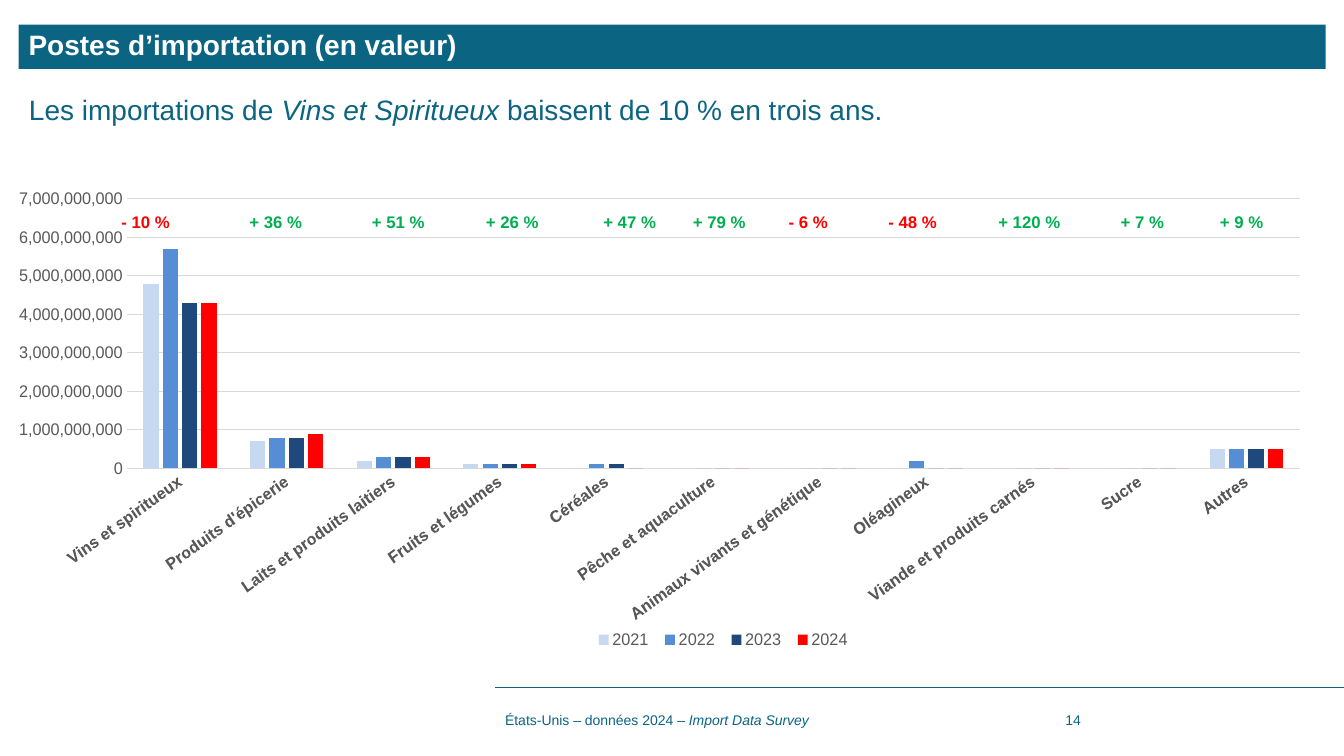
from dataclasses import dataclass

from lxml import etree
from pptx import Presentation
from pptx.chart.data import CategoryChartData
from pptx.dml.color import RGBColor
from pptx.enum.chart import XL_CHART_TYPE, XL_LEGEND_POSITION, XL_TICK_MARK
from pptx.enum.shapes import MSO_CONNECTOR, MSO_SHAPE
from pptx.enum.text import MSO_ANCHOR, PP_ALIGN
from pptx.oxml import parse_xml
from pptx.oxml.ns import nsdecls, qn
from pptx.util import Cm, Pt

COLUMNS = XL_CHART_TYPE.COLUMN_CLUSTERED
LEGEND_BOTTOM = XL_LEGEND_POSITION.BOTTOM
NO_TICK = XL_TICK_MARK.NONE
STRAIGHT = MSO_CONNECTOR.STRAIGHT
RECTANGLE = MSO_SHAPE.RECTANGLE
MIDDLE, TOP = MSO_ANCHOR.MIDDLE, MSO_ANCHOR.TOP
LEFT = PP_ALIGN.LEFT


@dataclass(frozen=True)
class Theme:
    """Colours, font and type sizes of the deck."""
    font: str = "Arial"
    teal: str = "0B6482"
    white: str = "FFFFFF"
    grey: str = "595959"
    grid: str = "D9D9D9"
    rise: str = "00B050"
    fall: str = "FF0000"
    years: tuple = ("C6D9F1", "558ED5", "1F497D", "FF0000")
    heading: int = 20
    label: int = 12
    footer: int = 10


@dataclass(frozen=True)
class Box:
    """A rectangle in centimetres, or in shares of a chart."""
    left: float
    top: float
    width: float
    height: float

    def lengths(self):
        """Return the rectangle as slide lengths."""
        return [Cm(side) for side in (self.left, self.top, self.width, self.height)]


THEME = Theme()
BILLION = 1_000_000_000
CATEGORIES = [
    "Vins et spiritueux", "Produits d'épicerie", "Laits et produits laitiers",
    "Fruits et légumes", "Céréales", "Pêche et aquaculture",
    "Animaux vivants et génétique", "Oléagineux", "Viande et produits carnés",
    "Sucre", "Autres",
]
IMPORTS = {
    "2021": [4.8, 0.7, 0.2, 0.1, 0, 0, 0, 0, 0, 0, 0.5],
    "2022": [5.7, 0.8, 0.3, 0.1, 0.1, 0, 0, 0.2, 0, 0, 0.5],
    "2023": [4.3, 0.8, 0.3, 0.1, 0.1, 0, 0, 0, 0, 0, 0.5],
    "2024": [4.3, 0.9, 0.3, 0.1, 0, 0, 0, 0, 0, 0, 0.5],
}
FIRST_CHANGE = "- 10 %"
CHANGES = [
    ("+ 36 %", 3.89), ("+ 51 %", 6.98), ("+ 26 %", 9.85), ("+ 47 %", 12.81),
    ("+ 79 %", 15.07), ("- 6 %", 17.31), ("- 48 %", 19.94), ("+ 120 %", 22.88),
    ("+ 7 %", 25.73), ("+ 9 %", 28.23),
]


def style_font(font, size, color, **formats):
    """Apply the theme font with a size, a colour and further formats."""
    for name, value in {"name": THEME.font, "size": Pt(size), **formats}.items():
        setattr(font, name, value)
    font.color.rgb = RGBColor.from_string(color)


def style_line(line, color, width):
    """Give a line its colour and width."""
    line.color.rgb = RGBColor.from_string(color)
    line.width = Pt(width)


def write_runs(shape, runs, size, anchor=MIDDLE, spacing=None):
    """Write (text, colour, formats) runs into a shape's first paragraph."""
    frame = shape.text_frame
    frame.word_wrap = True
    frame.vertical_anchor = anchor
    para = frame.paragraphs[0]
    para.alignment = LEFT
    para.line_spacing = spacing
    for text, color, formats in runs:
        span = para.add_run()
        span.text = text
        style_font(span.font, size, color, **formats)


def add_title(page, box):
    """Draw the filled title band."""
    band = page.shapes.add_shape(RECTANGLE, *box.lengths())
    band.shadow.inherit = False
    band.fill.solid()
    band.fill.fore_color.rgb = RGBColor.from_string(THEME.teal)
    band.line.fill.background()
    write_runs(band, [("Postes d’importation (en valeur)", THEME.white, {"bold": True})],
               THEME.heading, spacing=0.9)


def add_message(page, box):
    """Write the key message under the title."""
    runs = [
        ("Les importations de ", THEME.teal, {}),
        ("Vins et Spiritueux ", THEME.teal, {"italic": True}),
        ("baissent de 10 % en trois ans.", THEME.teal, {}),
    ]
    write_runs(page.shapes.add_textbox(*box.lengths()), runs, THEME.heading, TOP, 0.8)


def add_imports_chart(page, box):
    """Draw the clustered columns of imports by category and year."""
    data = CategoryChartData(number_format="#,##0")
    data.categories = CATEGORIES
    for year, billions in IMPORTS.items():
        data.add_series(year, [round(value * BILLION) for value in billions])
    chart = page.shapes.add_chart(COLUMNS, *box.lengths(), data).chart
    style_font(chart.font, THEME.label, THEME.grey)
    chart.has_title = False
    chart.has_legend = True
    chart.legend.position = LEGEND_BOTTOM
    chart.legend.include_in_layout = False
    style_font(chart.legend.font, THEME.label, THEME.grey)

    plot = chart.plots[0]
    for name, value in {"gap_width": 219, "overlap": -27, "vary_by_categories": False}.items():
        setattr(plot, name, value)
    for series, color in zip(plot.series, THEME.years):
        series.invert_if_negative = False
        series.format.fill.solid()
        series.format.fill.fore_color.rgb = RGBColor.from_string(color)

    for axis, bold in ((chart.category_axis, True), (chart.value_axis, False)):
        axis.major_tick_mark = axis.minor_tick_mark = NO_TICK
        style_font(axis.tick_labels.font, THEME.label, THEME.grey, bold=bold)
    style_line(chart.category_axis.format.line, THEME.grid, 0.75)
    slant = chart.category_axis._element.find(qn("c:txPr")).find(qn("a:bodyPr"))
    slant.set("rot", "-2100000")
    slant.set("vert", "horz")
    values = chart.value_axis
    scale = {"minimum_scale": 0, "maximum_scale": 7 * BILLION, "major_unit": BILLION}
    for name, value in scale.items():
        setattr(values, name, value)
    values.format.line.fill.background()
    style_line(values.major_gridlines.format.line, THEME.grid, 0.75)
    values.tick_labels.number_format = "#,##0"
    values.tick_labels.number_format_is_linked = False
    place_part(chart._chartSpace.chart.plotArea, 0, Box(0.05, 0.111, 0.929, 0.525),
               {"layoutTarget": "inner"})
    place_part(chart.legend._element, 1, Box(0.415, 0.94, 0.215, 0.06), {})


def place_part(part, index, share, target):
    """Fix a chart part at shares of the chart."""
    for automatic in part.findall(qn("c:layout")):
        part.remove(automatic)
    settings = {**target, "xMode": "edge", "yMode": "edge", "x": share.left,
                "y": share.top, "w": share.width, "h": share.height}
    items = "".join(f'<c:{name} val="{value}"/>' for name, value in settings.items())
    part.insert(index, parse_xml(f'<c:layout {nsdecls("c")}><c:manualLayout>{items}'
                                 '</c:manualLayout></c:layout>'))


def add_changes(page, box):
    """Write the row of three-year changes on centred tab stops."""
    row = page.shapes.add_textbox(*box.lengths())
    properties = row.text_frame.paragraphs[0]._p.get_or_add_pPr()
    stops = etree.SubElement(properties, qn("a:tabLst"))
    for _, centre in CHANGES:
        etree.SubElement(stops, qn("a:tab"), pos=str(int(Cm(centre))), algn="ctr")
    texts = [FIRST_CHANGE] + [f"\t{change}" for change, _ in CHANGES]
    runs = [(text, THEME.fall if "-" in text else THEME.rise, {"bold": True}) for text in texts]
    write_runs(row, runs, THEME.label, TOP)


def add_footer(page, box):
    """Draw the footer rule, the source and the page number."""
    rule = page.shapes.add_connector(STRAIGHT, Cm(box.left + box.width), Cm(box.top),
                                     Cm(box.left), Cm(box.top))
    style_line(rule.line, THEME.teal, 0.5)
    etree.SubElement(rule._element.spPr, qn("a:effectLst"))
    source = [("États-Unis – données 2024 – ", THEME.teal, {}),
              ("Import Data Survey", THEME.teal, {"italic": True})]
    number = [("14", THEME.teal, {})]
    for offset, width, runs in ((0, 13.79, source), (14.12, 2.51, number)):
        place = Box(box.left + offset, box.top + 0.33, width, box.height - 0.36)
        write_runs(page.shapes.add_textbox(*place.lengths()), runs, THEME.footer)


def main():
    """Build and save the deck."""
    deck = Presentation()
    deck.slide_width, deck.slide_height = Cm(33.87), Cm(19.05)
    page = deck.slides.add_slide(deck.slide_layouts[6])
    add_footer(page, Box(12.48, 17.31, 21.39, 1.38))
    add_title(page, Box(0.47, 0.62, 32.94, 1.12))
    add_message(page, Box(0.48, 2.37, 32.92, 0.99))
    add_imports_chart(page, Box(0.48, 3.58, 32.94, 12.93))
    add_changes(page, Box(2.81, 5.21, 30.07, 0.76))
    deck.save("out.pptx")


if __name__ == "__main__":
    main()
